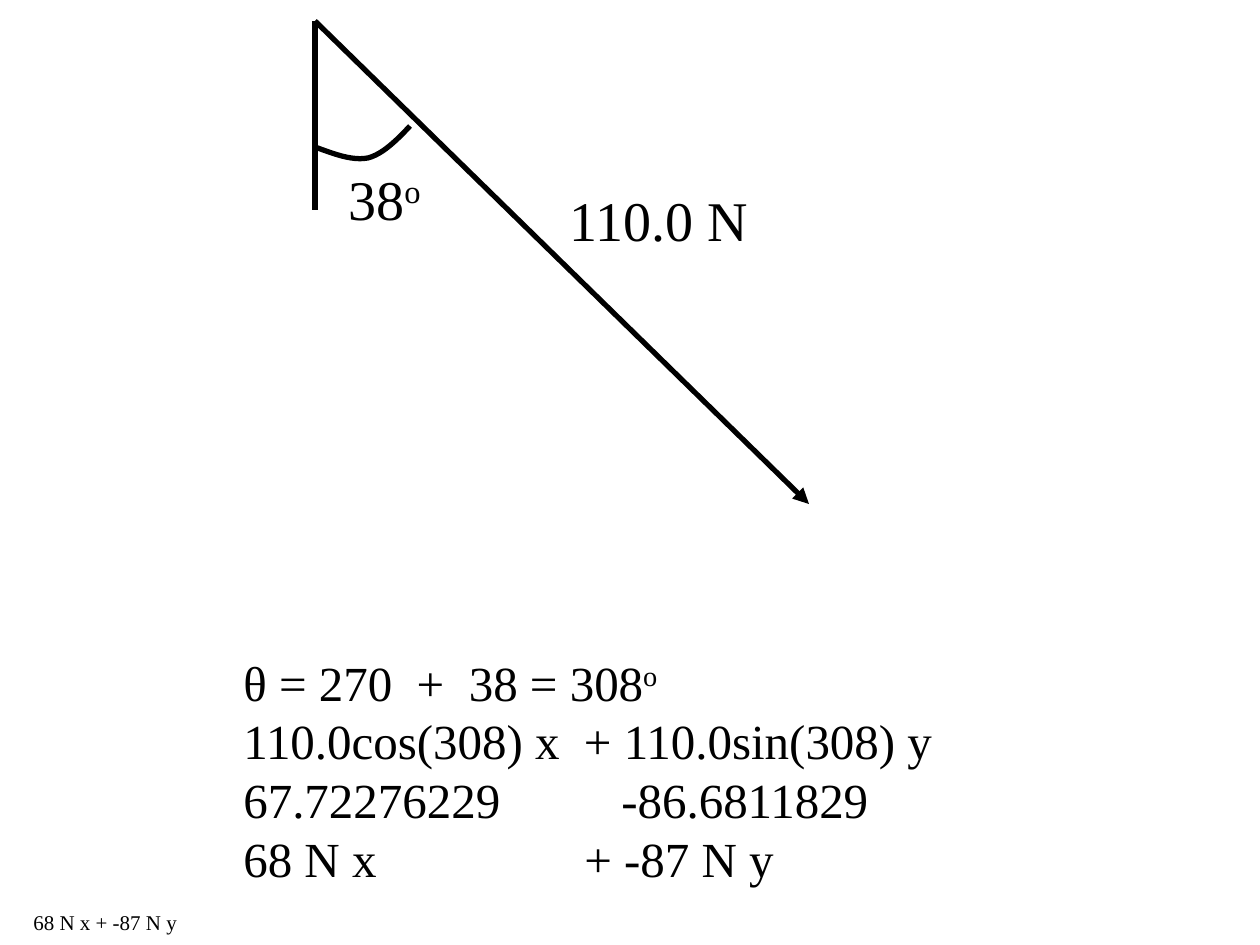
"""Build a slide resolving a 110.0 N force into x and y components."""
import pptx
import pptx.dml.color
import pptx.enum.shapes
import pptx.enum.text
import pptx.oxml
import pptx.oxml.ns
import pptx.util

PX = 914400 / 126
SLIDE = (1260, 945)
INK = "000000"
FONT = "Times New Roman"
LINE_WIDTH = 3
LINE_SPACING = 1.2

# Each paragraph is (text, superscript, tab stop in px).
LABELS = [
    {"at": (21, 903, 169, 38), "size": 12, "paras": [("68 N x + -87 N y", "", 0)]},
    {"at": (557, 179, 205, 79), "size": 32, "paras": [("110.0 N", "", 0)]},
    {"at": (336, 158, 100, 79), "size": 32, "paras": [("38", "o", 0)]},
    {"at": (231, 646, 718, 248), "size": 28, "paras": [
        ("θ = 270  +  38 = 308", "o", 0),
        ("110.0cos(308) x  + 110.0sin(308) y", "", 0),
        ("67.72276229\t-86.6811829", "", 378),
        ("68 N x\t+ -87 N y", "", 341),
    ]},
]
ORIGIN = (315, 21)
VERTICAL_END = (315, 210)
FORCE_END = (809, 504)
ANGLE_CURVES = [
    [(315, 147), (334, 154), (352, 161), (368, 158)],
    [(368, 158), (383, 154), (397, 140), (410, 126)],
]
CURVE_STEPS = 12


def emu(px):
    return pptx.util.Emu(round(px * PX))


def color(value):
    return pptx.dml.color.RGBColor.from_string(value)


def add_xml(parent, tag, **attributes):
    child = pptx.oxml.parse_xml(f"<a:{tag} {pptx.oxml.ns.nsdecls('a')}/>")
    for name, value in attributes.items():
        child.set(name, str(value))
    parent.append(child)
    return child


def add_text(page, paras, at, size):
    box = page.shapes.add_textbox(*map(emu, at))
    frame = box.text_frame
    frame.word_wrap = False
    frame.auto_size = pptx.enum.text.MSO_AUTO_SIZE.SHAPE_TO_FIT_TEXT
    for index, (text, superscript, tab) in enumerate(paras):
        para = frame.paragraphs[0] if index == 0 else frame.add_paragraph()
        para.line_spacing = pptx.util.Pt(size * LINE_SPACING)
        if tab:
            tabs = add_xml(para._p.get_or_add_pPr(), "tabLst")
            add_xml(tabs, "tab", pos=emu(tab), algn="l")
        for content, baseline in ((text, 0), (superscript, 30000)):
            if content:
                span = para.add_run()
                span.text = content
                span.font.name = FONT
                span.font.size = pptx.util.Pt(size)
                span.font.color.rgb = color(INK)
                if baseline:
                    span.font._element.set("baseline", str(baseline))


def style_line(line):
    line.color.rgb = color(INK)
    line.width = pptx.util.Pt(LINE_WIDTH)


def add_line(page, start, end, arrow=False):
    connector = page.shapes.add_connector(
        pptx.enum.shapes.MSO_CONNECTOR.STRAIGHT, *map(emu, start + end))
    style_line(connector.line)
    if arrow:
        add_xml(connector.line._get_or_add_ln(), "tailEnd", type="triangle")
    add_xml(connector._element.spPr, "effectLst")


def bezier(points, t):
    weights = ((1 - t) ** 3, 3 * t * (1 - t) ** 2, 3 * t * t * (1 - t), t ** 3)
    return tuple(sum(w * p[axis] for w, p in zip(weights, points)) * PX
                 for axis in (0, 1))


def add_angle(page, curves):
    points = [bezier(curve, step / CURVE_STEPS)
              for curve in curves for step in range(1, CURVE_STEPS + 1)]
    builder = page.shapes.build_freeform(*bezier(curves[0], 0))
    builder.add_line_segments(points, close=False)
    arc = builder.convert_to_shape()
    arc.fill.background()
    style_line(arc.line)
    arc.shadow.inherit = False


def main():
    deck = pptx.Presentation()
    deck.slide_width, deck.slide_height = map(emu, SLIDE)
    page = deck.slides.add_slide(deck.slide_layouts[6])
    for label in LABELS:
        add_text(page, **label)
    add_line(page, ORIGIN, VERTICAL_END)
    add_line(page, ORIGIN, FORCE_END, arrow=True)
    add_angle(page, ANGLE_CURVES)
    deck.save("out.pptx")


if __name__ == "__main__":
    main()
